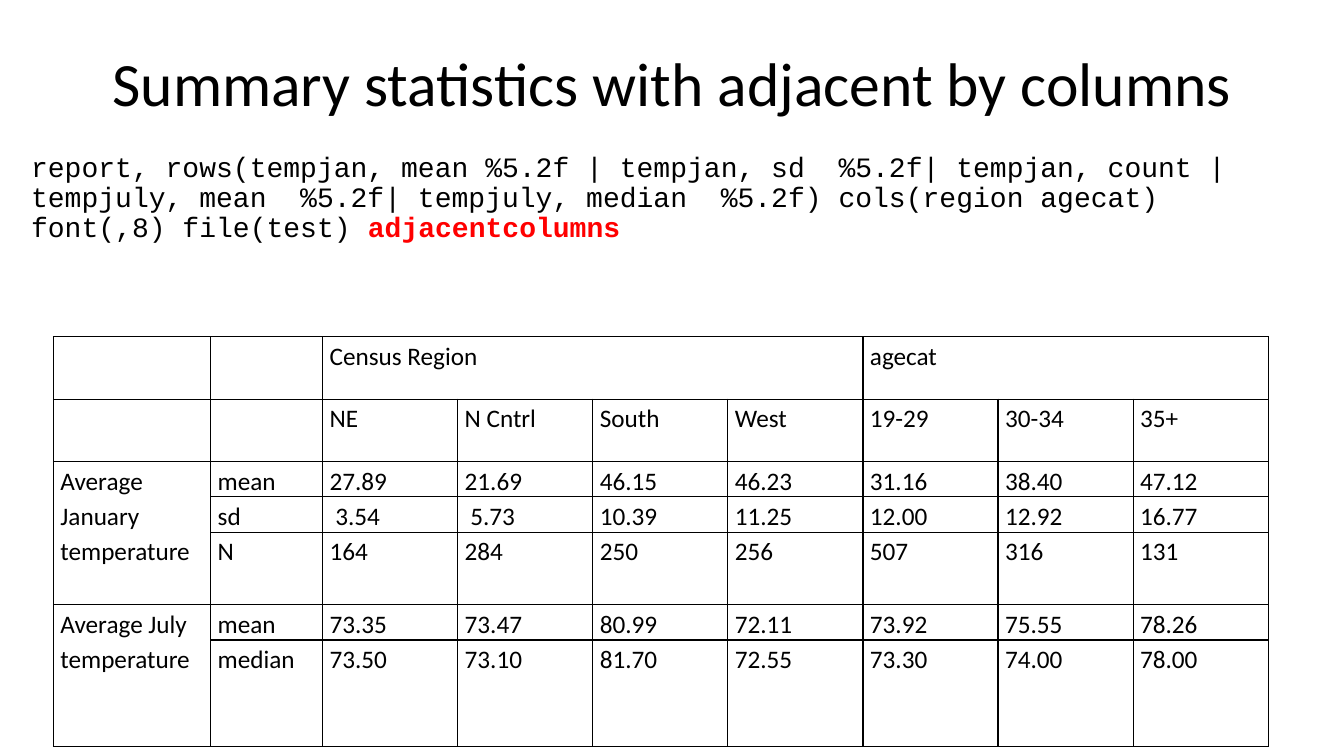
from lxml.etree import SubElement
from pptx import Presentation
from pptx.dml.color import RGBColor
from pptx.enum.text import MSO_ANCHOR as Anchor, PP_ALIGN as Align
from pptx.oxml.ns import qn
from pptx.util import Inches, Pt

BLACK, RED = "000000", "FF0000"
COMMAND = (
    "report, rows(tempjan, mean %5.2f | tempjan, sd  %5.2f| tempjan, count | "
    "tempjuly, mean  %5.2f| tempjuly, median  %5.2f) cols(region agecat)  "
    "font(,8) file(test) "
)
COLUMN_WIDTHS = [1.56, 1.11] + [1.34] * 7
ROW_HEIGHTS = [0.62, 0.62, 0.35, 0.35, 0.72, 0.35, 1.06]
STATISTICS = [
    ["", "", "Census Region", "", "", "", "agecat", "", ""],
    ["", "", "NE", "N Cntrl", "South", "West", "19-29", "30-34", "35+"],
    ["Average January temperature", "mean",
     "27.89", "21.69", "46.15", "46.23", "31.16", "38.40", "47.12"],
    ["", "sd", " 3.54", " 5.73", "10.39", "11.25", "12.00", "12.92", "16.77"],
    ["", "N", "164", "284", "250", "256", "507", "316", "131"],
    ["Average July temperature", "mean",
     "73.35", "73.47", "80.99", "72.11", "73.92", "75.55", "78.26"],
    ["", "median", "73.50", "73.10", "81.70", "72.55", "73.30", "74.00", "78.00"],
]
MERGES = [((0, 2), (0, 5)), ((0, 6), (0, 8)), ((2, 0), (4, 0)), ((5, 0), (6, 0))]


def color(value):
    """Turn a hex string into a colour."""
    return RGBColor.from_string(value)


def add_span(para, text, size, font, ink=BLACK, bold=False):
    """Add one formatted run to a paragraph."""
    span = para.add_run()
    span.text = text
    span.font.size = Pt(size)
    span.font.name = font
    span.font.bold = bold
    span.font.color.rgb = color(ink)


def add_text_box(page, left, top, width, height, anchor, align, space_before=0):
    """Add a wrapping text box and return its paragraph."""
    box = page.shapes.add_textbox(
        Inches(left), Inches(top), Inches(width), Inches(height))
    frame = box.text_frame
    frame.word_wrap = True
    frame.vertical_anchor = anchor
    para = frame.paragraphs[0]
    para.alignment = align
    para.line_spacing = 0.9
    para.space_before = Pt(space_before)
    return para


def add_borders(cell):
    """Draw a thin black line on every side of a cell."""
    properties = cell._tc.get_or_add_tcPr()
    for side in ("a:lnL", "a:lnR", "a:lnT", "a:lnB"):
        line = SubElement(properties, qn(side), w=str(Pt(1)))
        fill = SubElement(line, qn("a:solidFill"))
        SubElement(fill, qn("a:srgbClr"), val=BLACK)


def fill_cell(cell, text):
    """Format one table cell and write its text."""
    add_borders(cell)
    cell.fill.background()
    cell.margin_left = cell.margin_right = Inches(0.07)
    cell.margin_top = cell.margin_bottom = 0
    if text:
        para = cell.text_frame.paragraphs[0]
        para.line_spacing = 1.15
        add_span(para, text, 18, "Calibri")


def add_statistics_table(page, left, top):
    """Add the table of temperatures by region and age."""
    table = page.shapes.add_table(
        len(ROW_HEIGHTS), len(COLUMN_WIDTHS), Inches(left), Inches(top),
        Inches(sum(COLUMN_WIDTHS)), Inches(sum(ROW_HEIGHTS))).table
    table.first_row = table.horz_banding = False
    for column, width in zip(table.columns, COLUMN_WIDTHS):
        column.width = Inches(width)
    for row, height, texts in zip(table.rows, ROW_HEIGHTS, STATISTICS):
        row.height = Inches(height)
        for cell, text in zip(row.cells, texts):
            fill_cell(cell, text)
    for first, last in MERGES:
        table.cell(*first).merge(table.cell(*last))


def main():
    """Build the slide and save the deck."""
    deck = Presentation()
    deck.slide_width, deck.slide_height = Inches(13.33), Inches(7.5)
    page = deck.slides.add_slide(deck.slide_layouts[6])
    title = add_text_box(page, 0.92, 0.13, 11.5, 1.45, Anchor.MIDDLE, Align.CENTER)
    add_span(title, "Summary statistics with adjacent by columns", 44, "Calibri")
    command = add_text_box(
        page, 0.21, 1.47, 12.89, 1.74, Anchor.TOP, Align.LEFT, space_before=10)
    add_span(command, COMMAND, 20, "Courier New")
    add_span(command, "adjacentcolumns", 20, "Courier New", RED, bold=True)
    add_statistics_table(page, 0.53, 3.34)
    deck.save("out.pptx")


if __name__ == "__main__":
    main()
